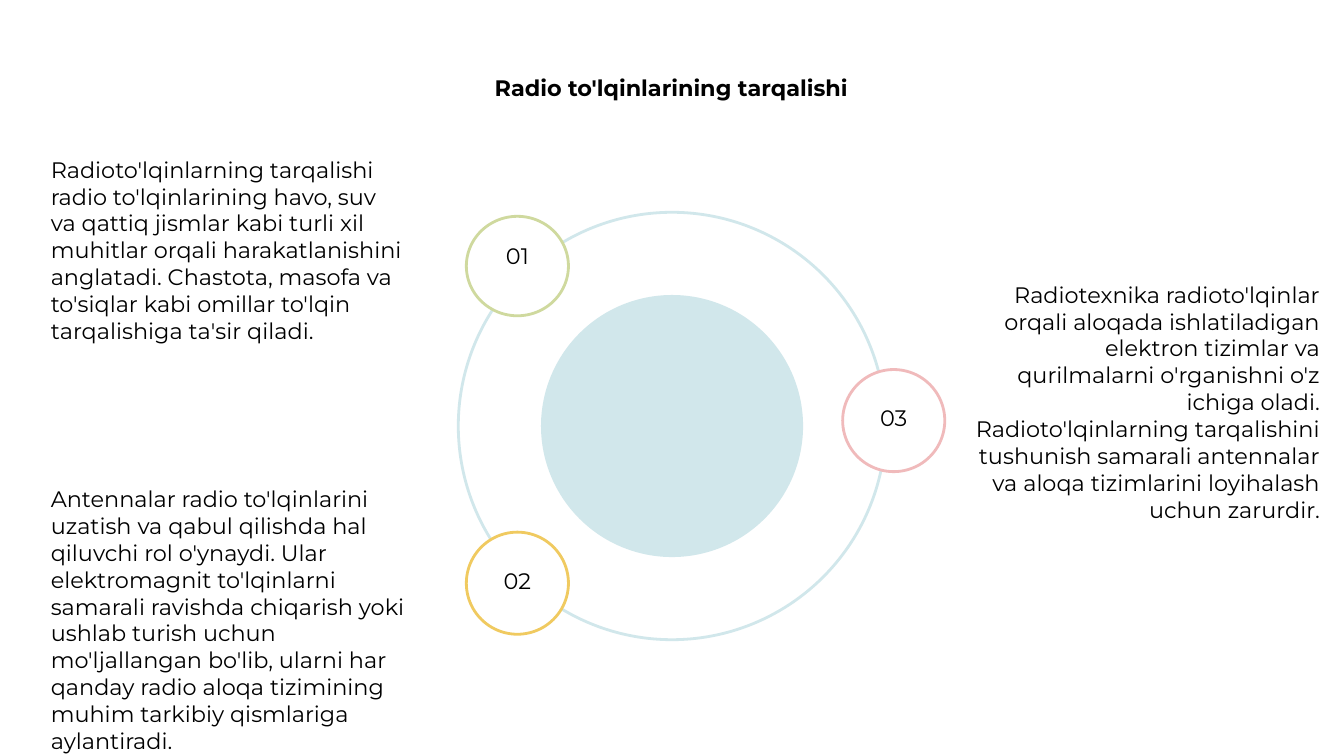
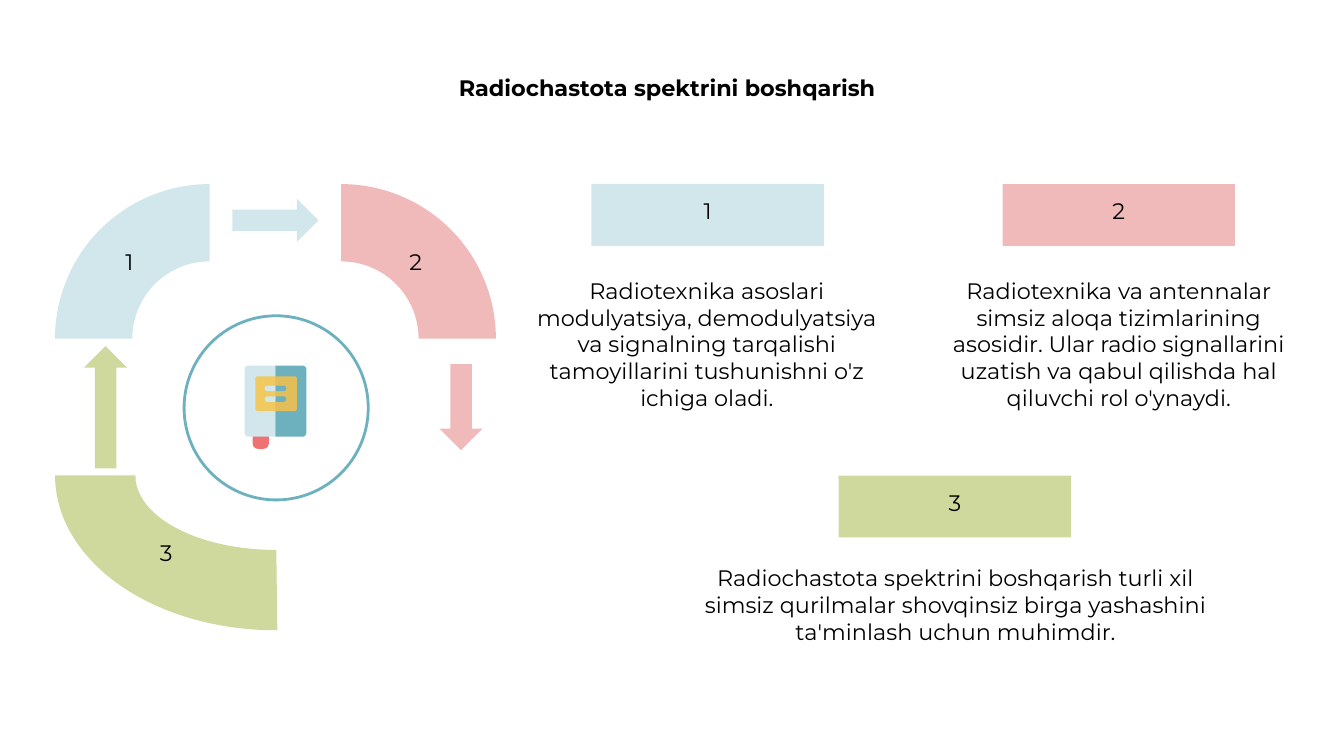
from math import cos, pi, sin

from lxml import etree
from pptx import Presentation
from pptx.dml.color import RGBColor
from pptx.enum.shapes import MSO_SHAPE
from pptx.enum.text import MSO_ANCHOR, PP_ALIGN
from pptx.oxml.ns import qn
from pptx.util import Inches, Pt

OVAL, BAR = MSO_SHAPE.OVAL, MSO_SHAPE.RECTANGLE
ARC, ARROW = MSO_SHAPE.BLOCK_ARC, MSO_SHAPE.RIGHT_ARROW
LEFT, CENTER, RIGHT = PP_ALIGN.LEFT, PP_ALIGN.CENTER, PP_ALIGN.RIGHT
TOP, MIDDLE = MSO_ANCHOR.TOP, MSO_ANCHOR.MIDDLE

THEME = {
    "font": "Montserrat", "size": 12, "line": 1.5, "inset": 0.1,
    "black": "000000", "white": "FFFFFF", "blue": "D1E7EB", "teal": "6DB1BF",
    "green": "CFD99E", "yellow": "F0CA60", "pink": "F0BABB", "red": "F07174",
}
SLIDE_WIDTH = 10
SLIDE_SIZE = (SLIDE_WIDTH, SLIDE_WIDTH * 9 / 16)

# Slide 1: areas are left, top, width, height in inches
PROPAGATION_TITLE = "Radio to'lqinlarining tarqalishi"
RING_CENTER = (5, 3.17)
RING_DIAMETER, CORE_DIAMETER = 3.18, 1.95
NODES = [  # label, colour, area, drop of the label box below the node's top
    ("01", "green", (3.47, 1.61, 0.76, 0.74), 0.09),
    ("02", "yellow", (3.47, 3.96, 0.76, 0.76), 0.16),
    ("03", "pink", (6.27, 2.75, 0.76, 0.76), 0.16),
]
NODE_LABEL = (0.58, 0.44)
PROPAGATION_NOTES = [
    ((0.28, 1.06, 2.83, 2.03), LEFT,
     "Radioto'lqinlarning tarqalishi radio to'lqinlarining havo, suv va qattiq "
     "jismlar kabi turli xil muhitlar orqali harakatlanishini anglatadi. Chastota, "
     "masofa va to'siqlar kabi omillar to'lqin tarqalishiga ta'sir qiladi."),
    ((0.28, 3.51, 2.83, 1.95), LEFT,
     "Antennalar radio to'lqinlarini uzatish va qabul qilishda hal qiluvchi rol "
     "o'ynaydi. Ular elektromagnit to'lqinlarni samarali ravishda chiqarish yoki "
     "ushlab turish uchun mo'ljallangan bo'lib, ularni har qanday radio aloqa "
     "tizimining muhim tarkibiy qismlariga aylantiradi."),
    ((7.12, 1.99, 2.8, 2.74), RIGHT,
     "Radiotexnika radioto'lqinlar orqali aloqada ishlatiladigan elektron tizimlar "
     "va qurilmalarni o'rganishni o'z ichiga oladi. Radioto'lqinlarning "
     "tarqalishini tushunish samarali antennalar va aloqa tizimlarini loyihalash "
     "uchun zarurdir."),
]

# Slide 2
SPECTRUM_TITLE = "Radiochastota spektrini boshqarish"
BAR_SIZE = (1.73, 0.46)
CARDS = [  # number, colour, bar corner, note area, note
    ("2", "pink", (7.46, 1.37), (6.82, 1.96, 3.01, 1.48),
     "Radiotexnika va antennalar simsiz aloqa tizimlarining asosidir. Ular radio "
     "signallarini uzatish va qabul qilishda hal qiluvchi rol o'ynaydi."),
    ("1", "blue", (4.4, 1.37), (3.84, 1.96, 2.84, 1.48),
     "Radiotexnika asoslari modulyatsiya, demodulyatsiya va signalning tarqalishi "
     "tamoyillarini tushunishni o'z ichiga oladi."),
    ("3", "green", (6.24, 3.54), (5.12, 4.1, 3.98, 1.43),
     "Radiochastota spektrini boshqarish turli xil simsiz qurilmalar shovqinsiz "
     "birga yashashini ta'minlash uchun muhimdir."),
]
QUARTER = (161.97, 0, 0.25)
CYCLE = [  # number, colour, arc area, arc adjustments, mirrored, arrow area, turn
    ("1 ", "blue", (0.41, 1.37, 2.3, 2.3), QUARTER, True, (1.73, 1.48, 0.64, 0.32), 0),
    ("2 ", "pink", (1.39, 1.37, 2.3, 2.3), QUARTER, False, (3.11, 2.87, 0.64, 0.32), 90),
    ("3", "green", (0.41, 2.39, 3.28, 2.3), (53.59, 108.06, 0.26), False,
     (0.33, 2.87, 0.91, 0.32), 270),
]
HUB = (1.37, 2.35, 1.37, 1.37)
SPINE = 2.05
BOOKMARK = (1.88, 3.21, 0.12, 0.13)
BOOK_PARTS = [  # top, height, corner, (width, colour) left and right of the spine
    (2.72, 0.53, 0.03, (0.23, "blue"), (0.23, "teal")),
    (2.8, 0.26, 0.02, (0.15, "yellow"), (0.16, "yellow")),
    (2.87, 0.04, 0.02, (0.08, "blue"), (0.08, "teal")),
    (2.95, 0.04, 0.02, (0.08, "blue"), (0.08, "teal")),
]
SHADED_PART, SHADE_ALPHA = 1, 6
CORNER_STEPS = 6


def inches(lengths):
    return [Inches(length) for length in lengths]


def color(name):
    return RGBColor.from_string(THEME[name])


def paint(shape, fill, line=None):
    shape.shadow.inherit = False
    shape.fill.solid()
    shape.fill.fore_color.rgb = color(fill)
    if line:
        shape.line.color.rgb = color(line)
        shape.line.width = Pt(THEME["line"])
    else:
        shape.line.fill.background()
    return shape


def write(shape, text, align=CENTER, anchor=TOP, bold=False):
    frame = shape.text_frame
    inset = Inches(THEME["inset"])
    frame_format = {"word_wrap": True, "vertical_anchor": anchor}
    frame_format.update({f"margin_{side}": inset
                         for side in ("left", "top", "right", "bottom")})
    for name, value in frame_format.items():
        setattr(frame, name, value)
    para = frame.paragraphs[0]
    para.alignment = align
    span = para.add_run()
    span.text = text
    font_format = {"name": THEME["font"], "size": Pt(THEME["size"]), "bold": bold}
    for name, value in font_format.items():
        setattr(span.font, name, value)
    span.font.color.rgb = color("black")


def add_text(page, area, text, **text_format):
    write(page.shapes.add_textbox(*inches(area)), text, **text_format)


def add_shape(page, kind, area, fill, line=None):
    return paint(page.shapes.add_shape(kind, *inches(area)), fill, line)


def add_circle(page, center, diameter, fill, line=None):
    x, y = center
    area = (x - diameter / 2, y - diameter / 2, diameter, diameter)
    add_shape(page, OVAL, area, fill, line)


def add_rounded(page, area, radii, fill):
    """Draw a box with its own radius at each corner, clockwise from top left."""
    left, top, width, height = area
    corners = [(left, top, 1, 1), (left + width, top, -1, 1),
               (left + width, top + height, -1, -1), (left, top + height, 1, -1)]
    points = []
    for index, ((x, y, inward_x, inward_y), radius) in enumerate(zip(corners, radii)):
        if not radius:
            points.append(inches((x, y)))
            continue
        for step in range(CORNER_STEPS + 1):
            angle = pi + (index + step / CORNER_STEPS) * pi / 2
            points.append(inches((x + radius * (inward_x + cos(angle)),
                                  y + radius * (inward_y + sin(angle)))))
    builder = page.shapes.build_freeform(*points[0])
    builder.add_line_segments(points[1:], close=True)
    return paint(builder.convert_to_shape(), fill)


def set_alpha(shape, percent):
    fill_color = shape._element.spPr.find(qn("a:solidFill"))[0]
    etree.SubElement(fill_color, qn("a:alpha")).set("val", str(percent * 1000))


def add_book(page):
    add_rounded(page, BOOKMARK, (0, 0, 0.04, 0.04), "red")
    for index, (top, height, corner, left_half, right_half) in enumerate(BOOK_PARTS):
        width, fill = left_half
        add_rounded(page, (SPINE - width, top, width, height),
                    (corner, 0, 0, corner), fill)
        width, fill = right_half
        area, radii = (SPINE, top, width, height), (0, corner, corner, 0)
        add_rounded(page, area, radii, fill)
        if index == SHADED_PART:
            set_alpha(add_rounded(page, area, radii, "black"), SHADE_ALPHA)


def add_page(deck, title, title_left):
    page = deck.slides.add_slide(deck.slide_layouts[6])
    page.background.fill.solid()
    page.background.fill.fore_color.rgb = color("white")
    add_text(page, (title_left, 0.45, 9.01, 0.61), title, bold=True)
    return page


def build_propagation(deck):
    page = add_page(deck, PROPAGATION_TITLE, 0.49)
    add_circle(page, RING_CENTER, RING_DIAMETER, "white", "blue")
    label_width, label_height = NODE_LABEL
    for label, tint, area, drop in NODES:
        left, top, width, _ = area
        add_shape(page, OVAL, area, "white", tint)
        add_text(page, (left + (width - label_width) / 2, top + drop,
                        label_width, label_height), label)
    add_circle(page, RING_CENTER, CORE_DIAMETER, "blue")
    for area, align, note in PROPAGATION_NOTES:
        add_text(page, area, note, align=align)


def build_spectrum(deck):
    page = add_page(deck, SPECTRUM_TITLE, 0.46)
    add_shape(page, OVAL, HUB, "white", "teal")
    add_book(page)
    for number, tint, arc_area, adjustments, mirrored, arrow_area, turn in CYCLE:
        arc = add_shape(page, ARC, arc_area, tint)
        for index, value in enumerate(adjustments):
            arc.adjustments[index] = value
        if mirrored:
            arc._element.spPr.find(qn("a:xfrm")).set("flipH", "1")
        write(arc, number, anchor=MIDDLE)
        add_shape(page, ARROW, arrow_area, tint).rotation = turn
    for number, tint, corner, note_area, note in CARDS:
        write(add_shape(page, BAR, corner + BAR_SIZE, tint), number)
        add_text(page, note_area, note)


def main():
    deck = Presentation()
    deck.slide_width, deck.slide_height = inches(SLIDE_SIZE)
    build_propagation(deck)
    build_spectrum(deck)
    deck.save("out.pptx")


if __name__ == "__main__":
    main()
